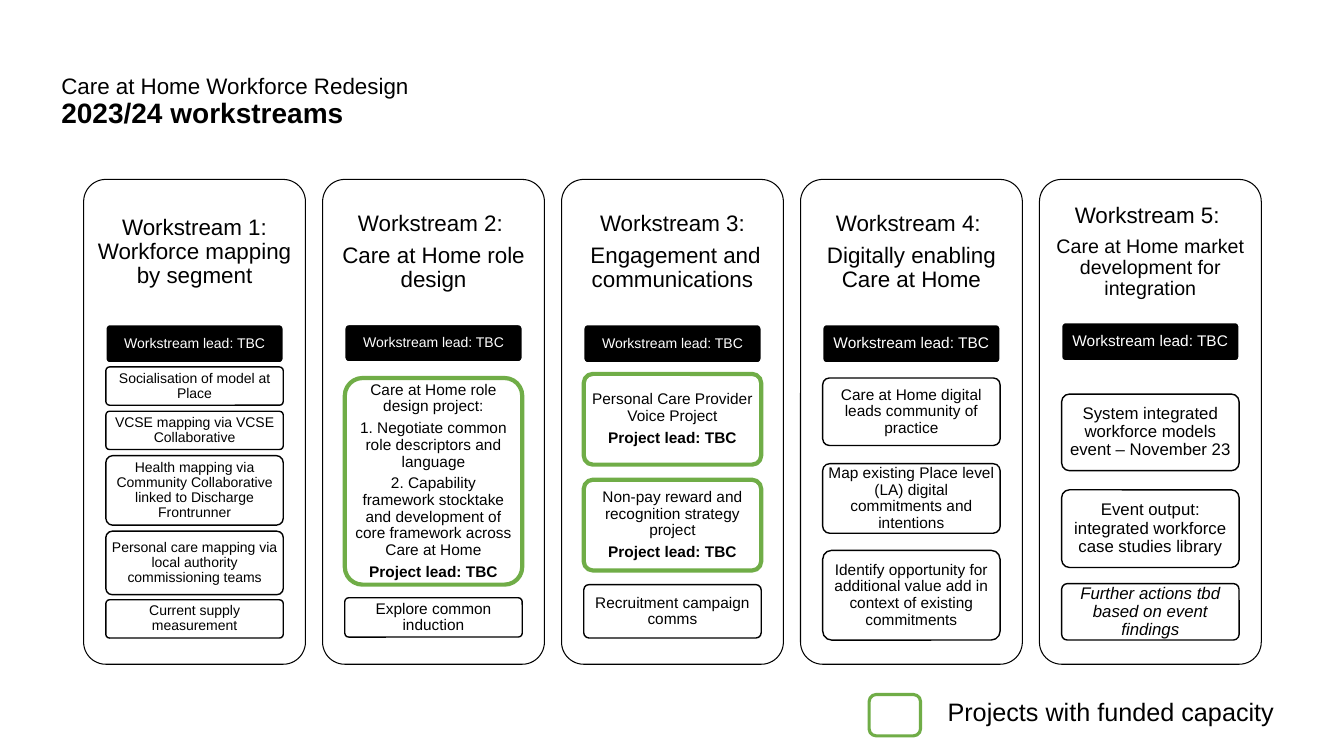
"""Build the Care at Home workstreams slide."""
from pptx import Presentation
from pptx.dml.color import RGBColor
from pptx.enum import shapes, text
from pptx.util import Inches, Pt

COLOURS = {"ink": "000000", "paper": "FFFFFF", "funded": "70AD47"}
FONT = "Arial"
TITLE = [("Care at Home Workforce Redesign", 16, False), ("2023/24 workstreams", 20, True)]
LEAD = "Workstream lead: TBC"
PROJECT_LEAD = "Project lead: TBC"
LEGEND = "Projects with funded capacity"

# heading lines; lead (top, height, size); card size; cards (top, height, lines, style)
WORKSTREAMS = [
    ([("Workstream 1: Workforce mapping by segment", 16)], (3.22, 0.38, 10), 10, [
        (3.64, 0.38, ["Socialisation of model at Place"], ""),
        (4.08, 0.38, ["VCSE mapping via VCSE Collaborative"], ""),
        (4.52, 0.69, ["Health mapping via Community Collaborative linked to "
                      "Discharge Frontrunner"], ""),
        (5.27, 0.63, ["Personal care mapping via local authority commissioning teams"], ""),
        (5.95, 0.38, ["Current supply measurement"], "")]),
    ([("Workstream 2: ", 16), ("Care at Home role design", 16)], (3.22, 0.37, 10), 11, [
        (3.75, 2.05, ["Care at Home role design project:",
                      "1. Negotiate common role descriptors and language",
                      "2. Capability framework stocktake and development of core "
                      "framework across Care at Home"], "funded"),
        (5.93, 0.39, ["Explore common induction"], "")]),
    ([("Workstream 3:", 16), (" Engagement and communications", 16)], (3.22, 0.38, 10), 11, [
        (3.71, 0.9, ["Personal Care Provider Voice Project"], "funded"),
        (4.76, 0.9, ["Non-pay reward and recognition strategy project"], "funded"),
        (5.8, 0.53, ["Recruitment campaign comms"], "")]),
    ([("Workstream 4: ", 16), ("Digitally enabling Care at Home", 16)], (3.22, 0.38, 11), 11, [
        (3.75, 0.67, ["Care at Home digital leads community of practice"], ""),
        (4.6, 0.69, ["Map existing Place level (LA) digital commitments and intentions"], ""),
        (5.46, 0.89, ["Identify opportunity for additional value add in context of "
                      "existing commitments"], "")]),
    ([("Workstream 5: ", 16), ("Care at Home market development for integration", 14)],
     (3.2, 0.38, 11), 12, [
        (3.91, 0.76, ["System integrated workforce models event – November 23"], ""),
        (4.86, 0.77, ["Event output: integrated workforce case studies library"], ""),
        (5.79, 0.56, ["Further actions tbd based on event findings"], "italic")]),
]

COLUMN_LEFT, COLUMN_TOP, COLUMN_WIDTH, COLUMN_HEIGHT = 0.83, 1.78, 2.2, 4.81
COLUMN_PITCH = 2.37
HEADING_HEIGHT = 1.44
CARD_INSET, CARD_WIDTH = 0.22, 1.76


def colour(name):
    """Return the named palette colour."""
    return RGBColor.from_string(COLOURS[name])


def set_frame(holder, margin_x, margin_y, anchor=text.MSO_ANCHOR.MIDDLE, wrap=True):
    """Set wrapping, anchor and margins of a text frame."""
    frame = holder.text_frame
    frame.word_wrap = wrap
    frame.vertical_anchor = anchor
    frame.margin_left = frame.margin_right = Inches(margin_x)
    frame.margin_top = frame.margin_bottom = Inches(margin_y)


def write(holder, words, size, ink="ink", bold=False, italic=False,
          align=text.PP_ALIGN.CENTER, spacing=0.9, gap=0.35):
    """Add one formatted paragraph to a shape."""
    frame = holder.text_frame
    paragraph = frame.add_paragraph() if frame.text else frame.paragraphs[0]
    paragraph.alignment = align
    paragraph.line_spacing = spacing
    paragraph.space_after = Pt(round(size * gap, 1))
    run = paragraph.add_run()
    run.text = words
    font = run.font
    font.name, font.size, font.bold, font.italic = FONT, Pt(size), bold, italic
    font.color.rgb = colour(ink)


def add_box(slide, left, top, width, height):
    """Add an empty text box."""
    return slide.shapes.add_textbox(*map(Inches, (left, top, width, height)))


def add_panel(slide, left, top, width, height, line="ink", weight=1, fill=None, corner=0.1):
    """Add a rounded rectangle."""
    panel = slide.shapes.add_shape(shapes.MSO_SHAPE.ROUNDED_RECTANGLE,
                                   *map(Inches, (left, top, width, height)))
    panel.adjustments[0] = corner
    panel.shadow.inherit = False
    if fill:
        panel.fill.solid()
        panel.fill.fore_color.rgb = colour(fill)
    else:
        panel.fill.background()
    panel.line.color.rgb = colour(line)
    panel.line.width = Pt(weight)
    set_frame(panel, 0.03, 0.02)
    return panel


def add_workstream(slide, left, headings, lead, card_size, cards):
    """Add one workstream column with its heading, lead and cards."""
    add_panel(slide, left, COLUMN_TOP, COLUMN_WIDTH, COLUMN_HEIGHT, weight=0.75)
    heading = add_box(slide, left, COLUMN_TOP, COLUMN_WIDTH, HEADING_HEIGHT)
    set_frame(heading, 0.07 if headings[-1][1] == 16 else 0, 0.07)
    for words, size in headings:
        write(heading, words, size)

    card_left = left + CARD_INSET
    lead_top, lead_height, lead_size = lead
    lead_bar = add_panel(slide, card_left, lead_top, CARD_WIDTH, lead_height,
                         line="paper", fill="ink")
    write(lead_bar, LEAD, lead_size, ink="paper")

    for top, height, lines, style in cards:
        funded = style == "funded"
        card = add_panel(slide, card_left, top, CARD_WIDTH, height,
                         line="funded" if funded else "ink", weight=3 if funded else 1)
        for words in lines:
            write(card, words, card_size, italic=style == "italic")
        if funded:
            write(card, PROJECT_LEAD, card_size, bold=True)


def main():
    """Assemble and save the slide."""
    deck = Presentation()
    deck.slide_width, deck.slide_height = Inches(13.33), Inches(7.5)
    slide = deck.slides.add_slide(deck.slide_layouts[6])

    title = add_box(slide, 0.51, 0.4, 7.17, 1.24)
    set_frame(title, 0.1, 0.05)
    for words, size, bold in TITLE:
        write(title, words, size, bold=bold, align=text.PP_ALIGN.LEFT, gap=0)

    for index, workstream in enumerate(WORKSTREAMS):
        add_workstream(slide, COLUMN_LEFT + index * COLUMN_PITCH, *workstream)

    add_panel(slide, 8.62, 6.89, 0.51, 0.41, line="funded", weight=2.25, corner=0.17)
    legend = add_box(slide, 9.3, 6.86, 3.74, 0.4)
    set_frame(legend, 0.1, 0.05, anchor=text.MSO_ANCHOR.TOP)
    write(legend, LEGEND, 18, align=text.PP_ALIGN.LEFT, spacing=1.0, gap=0)

    deck.save("out.pptx")


if __name__ == "__main__":
    main()
